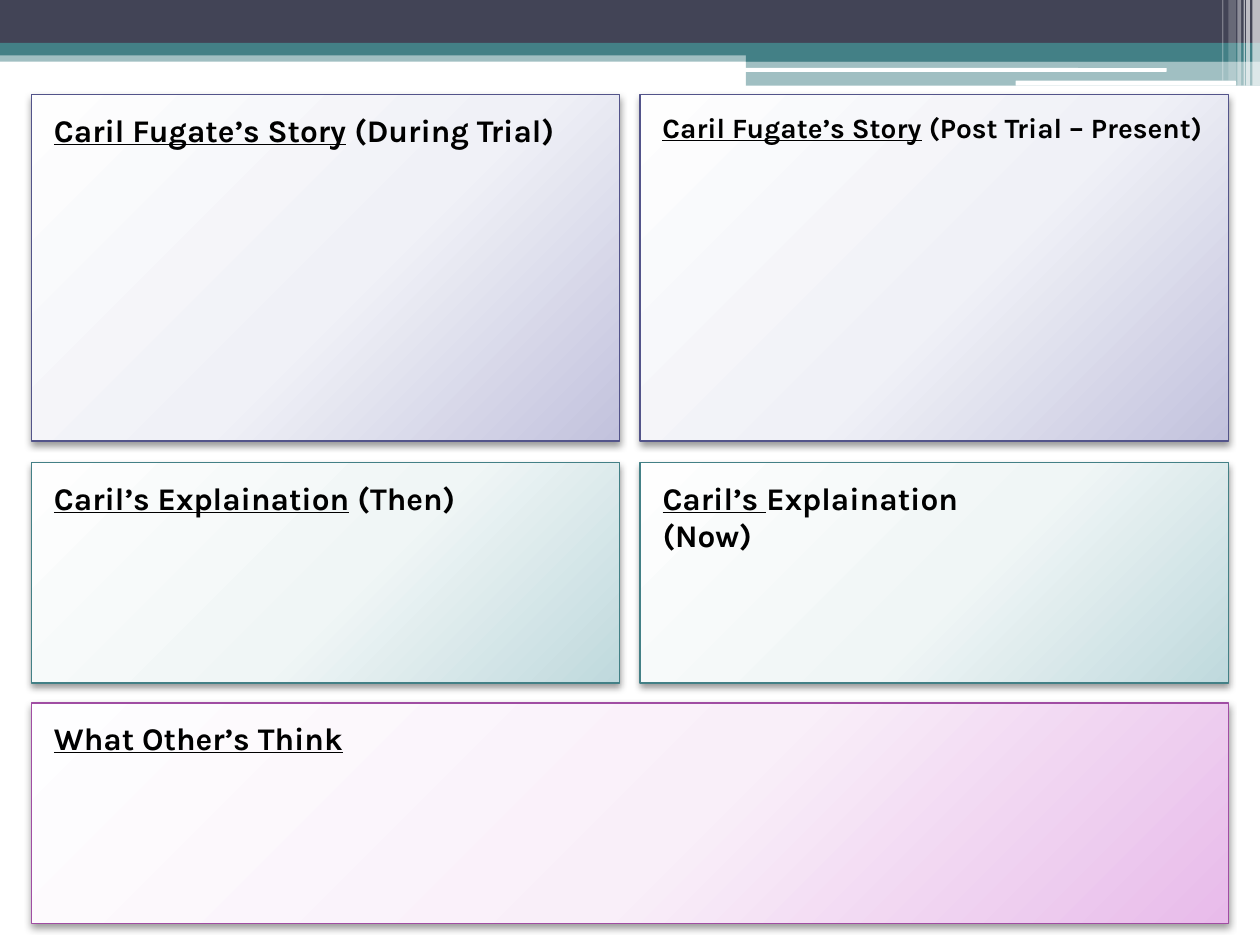
import pptx
import pptx.util
import pptx.oxml
import pptx.oxml.ns
import pptx.dml.color
import pptx.enum.shapes
import pptx.enum.text

Inches = pptx.util.Inches
Kind = pptx.enum.shapes.MSO_SHAPE
qn = pptx.oxml.ns.qn
NS = pptx.oxml.ns.nsdecls("a")

WHITE = "FFFFFF"
TEAL = "438086"
SLATE = "424456"


def color(text):
    return pptx.dml.color.RGBColor.from_string(text)


class Deck:
    font = "Karla"
    ink = "000000"

    def __init__(self):
        self.prs = pptx.Presentation()
        self.prs.slide_width = Inches(10)
        self.prs.slide_height = Inches(7.5)
        self.slide = self.prs.slides.add_slide(self.prs.slide_layouts[6])

    def shape(self, box, kind=Kind.RECTANGLE):
        shape = self.slide.shapes.add_shape(kind, *map(Inches, box))
        shape.shadow.inherit = False
        return shape

    def band(self, box, fill, alpha=100, kind=Kind.RECTANGLE):
        band = self.shape(box, kind)
        band.line.fill.background()
        band.fill.solid()
        band.fill.fore_color.rgb = color(fill)
        if alpha < 100:
            tint = band._element.spPr.find(f".//{qn('a:srgbClr')}")
            tint.append(pptx.oxml.parse_xml(f'<a:alpha {NS} val="{alpha * 1000}"/>'))

    def card(self, box, line, stops):
        card = self.shape(box)
        card.line.color.rgb = color(line)
        card.line.width = pptx.util.Pt(0.75)
        card.fill.background()
        props = card._element.spPr
        marks = "".join(
            f'<a:gs pos="{pos * 1000}"><a:srgbClr val="{tint}"/></a:gs>'
            for pos, tint in zip((0, 55, 100), stops))
        props.replace(props.find(qn("a:noFill")), pptx.oxml.parse_xml(
            f'<a:gradFill {NS} rotWithShape="1"><a:gsLst>{marks}</a:gsLst>'
            '<a:path path="circle"><a:fillToRect l="-40000" t="-90000" '
            'r="140000" b="190000"/></a:path></a:gradFill>'))
        props.find(qn("a:effectLst")).append(pptx.oxml.parse_xml(
            f'<a:outerShdw {NS} blurRad="52070" dist="25400" dir="5400000" '
            'rotWithShape="0"><a:srgbClr val="000000"><a:alpha val="40000"/>'
            '</a:srgbClr></a:outerShdw>'))

    def label(self, box, lined, plain="", size=18):
        frame = self.slide.shapes.add_textbox(*map(Inches, box)).text_frame
        frame.word_wrap = True
        frame.auto_size = pptx.enum.text.MSO_AUTO_SIZE.SHAPE_TO_FIT_TEXT
        for text, under in ((lined, True), (plain, False)):
            if text:
                run = frame.paragraphs[0].add_run()
                run.text = text
                run.font.name = self.font
                run.font.size = pptx.util.Pt(size)
                run.font.bold = True
                run.font.underline = under
                run.font.color.rgb = color(self.ink)


def main():
    deck = Deck()

    for box, fill, alpha in (
        ((0, 0.4, 10, 0.09), TEAL, 50),
        ((0, 0, 10, 0.34), SLATE, 100),
        ((0, 0.34, 10, 0.1), TEAL, 100),
        ((5.92, 0.39, 4.08, 0.1), TEAL, 100),
        ((5.92, 0.48, 4.08, 0.2), TEAL, 50),
    ):
        deck.band(box, fill, alpha)
    for box in ((5.91, 0.54, 3.35, 0.03), (8.06, 0.64, 1.75, 0.04)):
        deck.band(box, WHITE, kind=Kind.ROUNDED_RECTANGLE)
    for left, wide, high, alpha in (
        (9.94, 0.06, 0.68, 65),
        (9.89, 0.03, 0.68, 65),
        (9.87, 0.01, 0.68, 60),
        (9.82, 0.03, 0.68, 40),
        (9.75, 0.06, 0.64, 20),
        (9.7, 0.01, 0.64, 30),
    ):
        deck.band((left, 0, wide, high), WHITE, alpha)

    violet = "53548A", ("FEFEFE", "F0F1F7", "C2C2DD")
    green = TEAL, ("FEFEFE", "F0F6F6", "BFD9DD")
    pink = "A04DA3", ("FEFEFF", "F9EFF9", "E8BBEA")
    near, far, half, full = 0.25, 5.08, 4.67, 9.5
    story = "Caril Fugate’s Story"
    pad = 0.08

    for left, top, wide, high, style, span, lined, plain, size in (
        (near, 0.75, half, 2.75, violet, 4.5, story, " (During Trial)", 18),
        (far, 0.75, half, 2.75, violet, 4.5, story, " (Post Trial – Present)", 16),
        (near, 3.67, half, 1.75, green, 4.42, "Caril’s Explaination", " (Then)", 18),
        (far, 3.67, half, 1.75, green, 3.25, "Caril’s ", "Explaination (Now)", 18),
        (near, 5.58, full, 1.75, pink, 3.25, "What Other’s Think", "", 18),
    ):
        deck.card((left, top, wide, high), *style)
        deck.label((left + pad, top + pad, span, 0.4), lined, plain, size)

    deck.prs.save("out.pptx")


if __name__ == "__main__":
    main()
